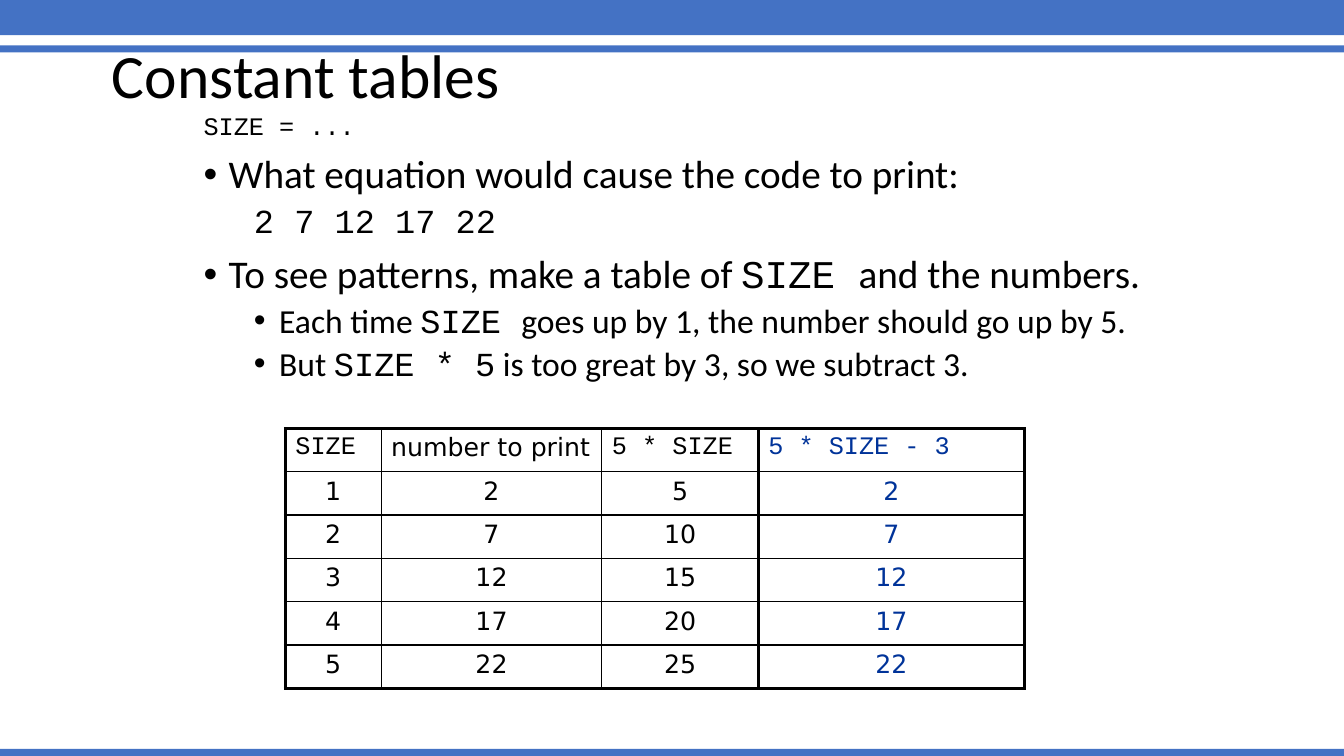
import pptx
import pptx.dml.color
import pptx.enum.shapes
import pptx.enum.text
import pptx.oxml
import pptx.oxml.ns
import pptx.util
from pptx.util import Inches

BLACK, BLUE, NAVY = "000000", "4472C4", "003399"
SANS, CODE, TABLE_FONT = "Calibri", "Courier New", "DejaVu Sans"
THIN, THICK = 1, 2.25


def color(hex_code):
    return pptx.dml.color.RGBColor.from_string(hex_code)


class SlideBuilder:
    def __init__(self, presentation):
        self.slide = presentation.slides.add_slide(presentation.slide_layouts[5])

    def bar(self, top, height):
        shape = self.slide.shapes.add_shape(
            pptx.enum.shapes.MSO_SHAPE.RECTANGLE,
            0, Inches(top), Inches(13.33), Inches(height))
        shape.shadow.inherit = False
        shape.fill.solid()
        shape.fill.fore_color.rgb = color(BLUE)
        shape.line.fill.background()

    def run(self, paragraph, text, font, size, hex_code=BLACK):
        run = paragraph.add_run()
        run.text = text
        run.font.name = font
        run.font.size = pptx.util.Pt(size)
        run.font.color.rgb = color(hex_code)

    def title(self, text):
        title = self.slide.shapes.title
        self.slide.shapes.element.append(title.element)  # in front of the bars
        title.left, title.top = Inches(1.01), Inches(0.39)
        title.width, title.height = Inches(10.15), Inches(0.77)
        frame = title.text_frame
        frame.auto_size = pptx.enum.text.MSO_AUTO_SIZE.NONE
        frame.vertical_anchor = pptx.enum.text.MSO_ANCHOR.MIDDLE
        paragraph = frame.paragraphs[0]
        paragraph.alignment = pptx.enum.text.PP_ALIGN.LEFT
        paragraph.line_spacing = 0.9
        self.run(paragraph, text, SANS, 44)

    def body(self, lines):
        """Each line is (level, left margin, bulleted, size, runs)."""
        box = self.slide.shapes.add_textbox(
            Inches(1.92), Inches(1.08), Inches(9.75), Inches(6.08))
        frame = box.text_frame
        frame.word_wrap = True
        for index, (level, margin, bulleted, size, runs) in enumerate(lines):
            paragraph = frame.paragraphs[0] if index == 0 else frame.add_paragraph()
            paragraph.level = level
            paragraph.line_spacing = 0.9
            paragraph.space_before = pptx.util.Pt(5 if level else 10)
            properties = paragraph._p.get_or_add_pPr()
            properties.set("marL", str(Inches(margin)))
            properties.set("indent", str(Inches(-0.25 if margin else 0)))
            if bulleted:
                font = pptx.oxml.ns.qn("a:buFont")
                bullet = pptx.oxml.ns.qn("a:buChar")
                properties.append(properties.makeelement(font, {"typeface": "Arial"}))
                properties.append(properties.makeelement(bullet, {"char": "•"}))
            for text, font in runs:
                self.run(paragraph, text, font, size)

    def border(self, cell, side, width):
        cell._tc.get_or_add_tcPr().append(pptx.oxml.parse_xml(
            f'<a:ln{side} {pptx.oxml.ns.nsdecls("a")} w="{pptx.util.Pt(width)}">'
            f'<a:solidFill><a:srgbClr val="{BLACK}"/></a:solidFill></a:ln{side}>'))

    def table(self, left, widths, rows, hex_code, left_border):
        last_row, last_column = len(rows) - 1, len(widths) - 1
        table = self.slide.shapes.add_table(
            len(rows), len(widths), Inches(left), Inches(4.25),
            Inches(sum(widths)), Inches(0.43 * len(rows))).table
        table.first_row = table.horz_banding = False
        for column, width in zip(table.columns, widths):
            column.width = Inches(width)
        for r, values in enumerate(rows):
            table.rows[r].height = Inches(0.43)
            for c, value in enumerate(values):
                cell = table.cell(r, c)
                self.border(cell, "L", THIN if c else left_border)
                self.border(cell, "R", THICK if c == last_column else THIN)
                self.border(cell, "T", THIN if r else THICK)
                self.border(cell, "B", THICK if r == last_row else THIN)
                cell.fill.background()
                paragraph = cell.text_frame.paragraphs[0]
                if r:
                    paragraph.alignment = pptx.enum.text.PP_ALIGN.CENTER
                is_code = "SIZE" in str(value)
                self.run(paragraph, str(value), CODE if is_code else TABLE_FONT,
                         18, hex_code)


def main():
    presentation = pptx.Presentation()
    presentation.slide_width = Inches(13.33)
    presentation.slide_height = Inches(7.5)
    builder = SlideBuilder(presentation)

    for top, height in [(-0.03, 0.38), (0.45, 0.07), (7.43, 0.07)]:
        builder.bar(top, height)
    builder.title("Constant tables")
    builder.body([
        (0, 0, False, 18, [("SIZE = ...", CODE)]),
        (0, 0.25, True, 28, [("What equation would cause the code to print:", SANS)]),
        (1, 0.75, False, 24, [("2 7 12 17 22", CODE)]),
        (0, 0.25, True, 28, [("To see patterns, make a table of ", SANS),
                             ("SIZE ", CODE), ("and the numbers.", SANS)]),
        (1, 0.75, True, 24, [("Each time ", SANS), ("SIZE ", CODE),
                             ("goes up by 1, the number should go up by 5.", SANS)]),
        (1, 0.75, True, 24, [("But ", SANS), ("SIZE * 5", CODE),
                             (" is too great by 3, so we subtract 3.", SANS)]),
    ])

    sizes = range(1, 6)
    pattern_rows = [("SIZE", "number to print", "5 * SIZE")]
    pattern_rows += [(size, 5 * size - 3, 5 * size) for size in sizes]
    answer_rows = [("5 * SIZE - 3",)] + [(5 * size - 3,) for size in sizes]
    builder.table(2.83, [0.95, 2.19, 1.55], pattern_rows, BLACK, THICK)
    builder.table(7.52, [2.64], answer_rows, NAVY, THIN)

    presentation.save("out.pptx")


if __name__ == "__main__":
    main()
